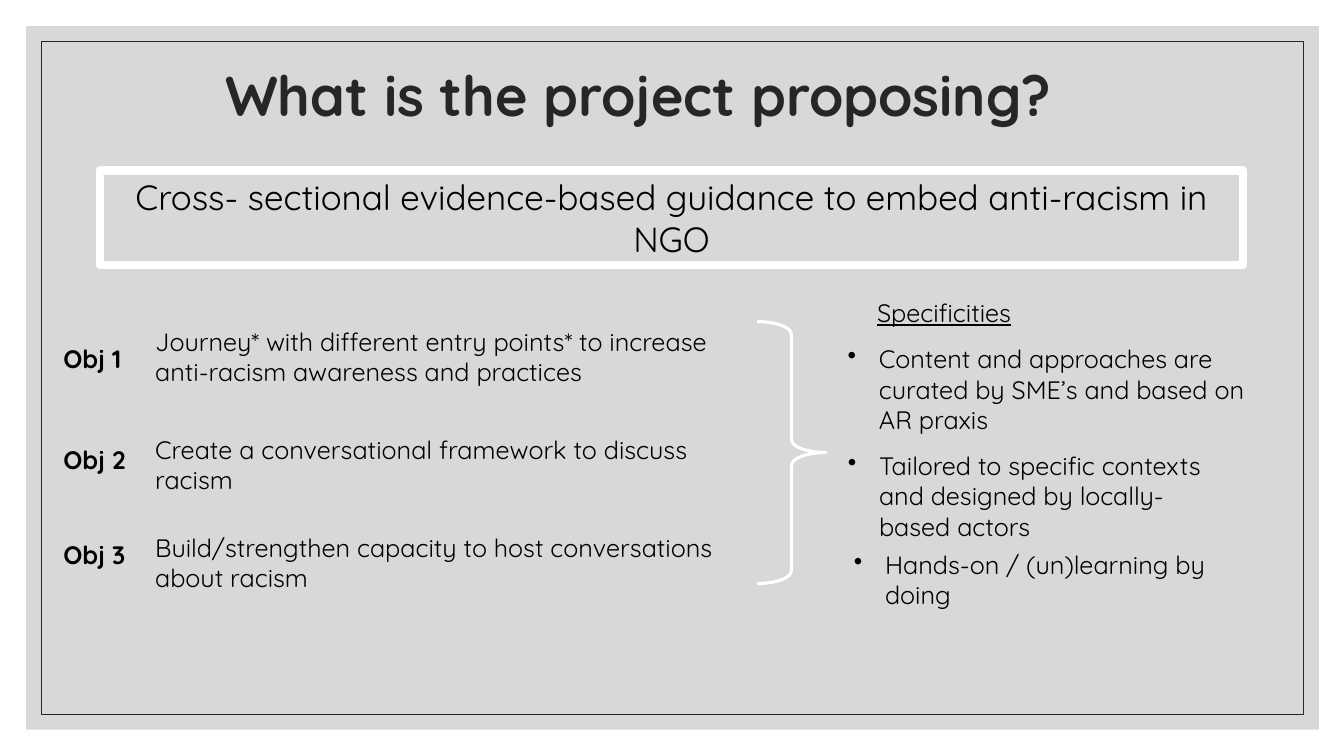
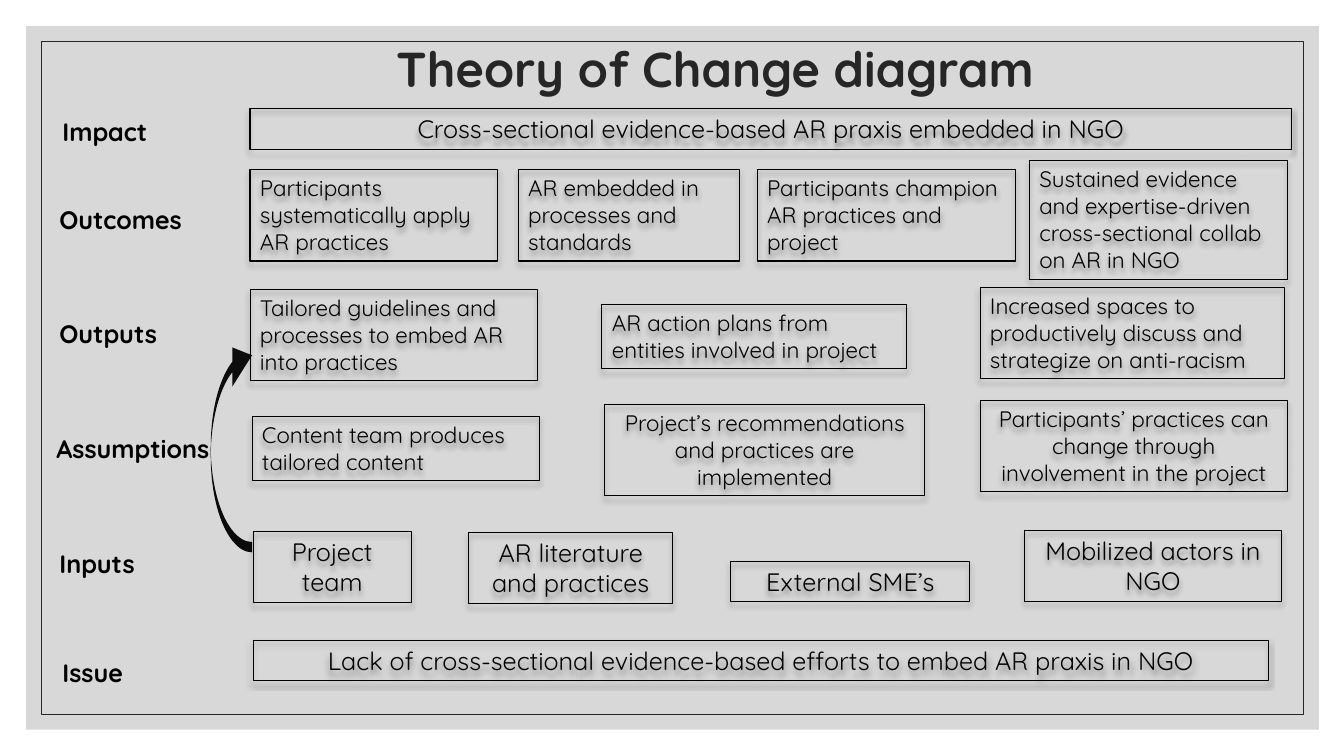
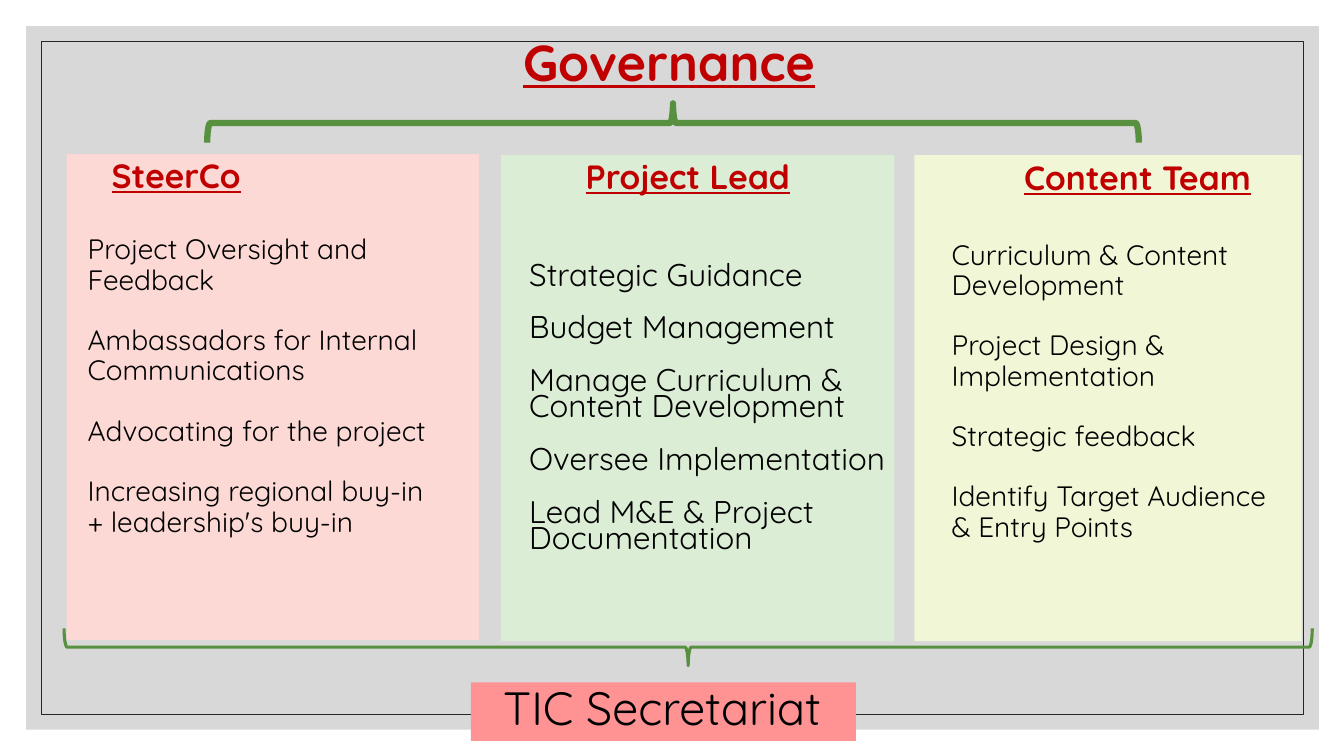
from lxml import etree
from pptx import Presentation
from pptx import util as u
from pptx.dml.color import RGBColor
from pptx.enum import shapes, text
from pptx.oxml.ns import qn

FONT = "Quicksand"
BLACK = RGBColor(0x00, 0x00, 0x00)
WHITE = RGBColor(0xFF, 0xFF, 0xFF)
GREY = RGBColor(0xBF, 0xBF, 0xBF)
CHARCOAL = RGBColor(0x26, 0x26, 0x26)
INK = RGBColor(0x0D, 0x0D, 0x0D)
RED = RGBColor(0xC0, 0x00, 0x00)
GREEN = RGBColor(0x57, 0x90, 0x3F)
PINK = RGBColor(0xFC, 0xD9, 0xD5)
MINT = RGBColor(0xDC, 0xED, 0xD5)
LEMON = RGBColor(0xF1, 0xF6, 0xD6)
CORAL = RGBColor(0xFF, 0x93, 0x93)

KIND = shapes.MSO_SHAPE
LEFT, CENTER = text.PP_ALIGN.LEFT, text.PP_ALIGN.CENTER
TOP, MIDDLE = text.MSO_ANCHOR.TOP, text.MSO_ANCHOR.MIDDLE


def inches(box):
    """Turn a box of numbers into lengths."""
    return [u.Inches(value) for value in box]


def write(frame, items, size, color=BLACK, bold=False, underline=False,
          align=LEFT, anchor=TOP, spacing=None, gap=0, bullet=False):
    """Fill a text frame with one paragraph for each item."""
    frame.word_wrap = True
    frame.vertical_anchor = anchor
    for index, item in enumerate(items):
        para = frame.paragraphs[0] if index == 0 else frame.add_paragraph()
        para.alignment = align
        if spacing:
            para.line_spacing = spacing
        if index and gap:
            para.space_before = u.Pt(gap)
        if bullet:
            props = para._p.get_or_add_pPr()
            props.set("marL", str(u.Inches(0.31)))
            props.set("indent", str(-u.Inches(0.31)))
            etree.SubElement(props, qn("a:buChar")).set("char", "•")
        for number, line in enumerate(item.split("\n")):
            if number:
                para.add_line_break()
            span = para.add_run()
            span.text = line
            span.font.name = FONT
            span.font.size = u.Pt(size)
            span.font.bold = bold
            span.font.underline = underline
            span.font.color.rgb = color


def label(page, box, items, size=18, **style):
    """Add a text box."""
    write(page.shapes.add_textbox(*inches(box)).text_frame, items, size, **style)


def title(page, box, words, size):
    """Add a centred slide title."""
    label(page, box, [words], size, color=CHARCOAL, bold=True,
          align=CENTER, anchor=MIDDLE, spacing=0.9)


def figure(page, box, kind=KIND.RECTANGLE, fill=None, line=None, width=0.75, rotation=0):
    """Add a flat preset shape."""
    shape = page.shapes.add_shape(kind, *inches(box))
    shape.shadow.inherit = False
    shape.rotation = rotation
    if fill is None:
        shape.fill.background()
    else:
        shape.fill.solid()
        shape.fill.fore_color.rgb = fill
    if line is None:
        shape.line.fill.background()
    else:
        shape.line.color.rgb = line
        shape.line.width = u.Pt(width)
    return shape


def add_shadow(shape):
    """Give a shape a soft shadow that falls straight down."""
    effects = shape._element.spPr.find(qn("a:effectLst"))
    shadow = etree.SubElement(effects, qn("a:outerShdw"), blurRad=str(u.Pt(4)),
                              dist=str(u.Pt(3)), dir="5400000", rotWithShape="0")
    color = etree.SubElement(shadow, qn("a:srgbClr"), val=str(BLACK))
    etree.SubElement(color, qn("a:alpha"), val="40000")


def new_page(deck):
    """Add a blank slide with the grey panel and its thin frame."""
    page = deck.slides.add_slide(deck.slide_layouts[6])
    panel = figure(page, (0.26, 0.26, 12.82, 6.98), fill=GREY)
    color = panel._element.spPr.find(qn("a:solidFill"))[0]
    etree.SubElement(color, qn("a:alpha"), val="60000")
    figure(page, (0.41, 0.41, 12.52, 6.68), line=CHARCOAL, width=0.5)
    return page


def objective(page, box, drop, name, words):
    """Place a bold objective name beside its description."""
    left, top, width, height = box
    label(page, (left, top + drop, 0.91, 0.4), [name], bold=True)
    label(page, (left + 0.91, top, width - 0.91, height), [words])


def proposal_slide(deck):
    """Build the slide on what the project proposes."""
    page = new_page(deck)
    title(page, (0.83, 0.39, 11, 1.18), "What is the project proposing?", 40)
    banner = figure(page, (0.99, 1.69, 11.34, 0.94), line=WHITE, width=6)
    write(banner.text_frame,
          ["Cross- sectional evidence-based guidance to embed anti-racism in NGO"],
          25, align=CENTER)
    objectives = [
        (3.19, 6.99, 0.17, "Journey* with different entry points* to increase "
                           "anti-racism awareness and practices"),
        (4.26, 6.7, 0.1, "Create a conversational framework to discuss racism"),
        (5.23, 6.99, 0.07, "Build/strengthen capacity to host conversations about racism"),
    ]
    for number, (top, width, drop, words) in enumerate(objectives, 1):
        objective(page, (0.53, top, width, 0.71), drop, f"Obj {number}", words)
    brace = figure(page, (7.51, 3.19, 0.68, 2.6), KIND.RIGHT_BRACE, line=WHITE, width=2.25)
    brace.adjustments[0] = 0.19
    label(page, (8.6, 2.9, 1.62, 0.4), ["Specificities"], underline=True)
    specificities = [
        ((8.31, 3.36, 4.37, 1.01),
         "Content and approaches are curated by SME’s and based on AR praxis"),
        ((8.31, 4.42, 4.01, 1.01),
         "Tailored to specific contexts and designed by locally-based actors"),
        ((8.37, 5.4, 4.37, 0.71), "Hands-on / (un)learning by doing"),
    ]
    for box, words in specificities:
        label(page, box, [words], bullet=True)


def change_row(page, corner, name, size, boxes):
    """Place a row name and the outlined boxes of that row."""
    label(page, (*corner, 1.92, 0.4), [name], bold=True)
    for *box, align, words in boxes:
        shape = figure(page, box, line=BLACK)
        add_shadow(shape)
        write(shape.text_frame, [words], size, align=align)


def change_slide(deck):
    """Build the theory of change diagram."""
    page = new_page(deck)
    title(page, (3.16, 0.33, 7.87, 0.76), "Theory of Change diagram", 35)
    rows = [
        ((0.52, 1.1), "Impact", 18, [
            (2.48, 1.08, 10.33, 0.4, CENTER,
             "Cross-sectional evidence-based AR praxis embedded in NGO")]),
        ((0.49, 1.98), "Outcomes", 16, [
            (2.48, 1.68, 2.46, 0.91, LEFT, "Participants systematically apply AR practices"),
            (5.14, 1.68, 2.19, 0.91, LEFT, "AR embedded in processes and standards"),
            (7.51, 1.68, 2.56, 0.91, LEFT, "Participants champion AR practices and project"),
            (10.21, 1.59, 2.56, 1.18, LEFT, "Sustained evidence and expertise-driven "
                                            "cross-sectional collab on AR in NGO")]),
        ((0.49, 3.11), "Outputs", 16, [
            (2.48, 2.87, 2.85, 0.91, LEFT,
             "Tailored guidelines and processes to embed AR into practices"),
            (5.97, 3.02, 3.02, 0.64, LEFT, "AR action plans from entities involved in project"),
            (9.72, 2.85, 3.02, 0.91, LEFT, "Increased spaces to productively discuss "
                                           "and strategize on anti-racism")]),
        ((0.46, 4.25), "Assumptions", 16, [
            (2.5, 4.13, 2.85, 0.64, LEFT, "Content team produces tailored content"),
            (6, 4.01, 3.17, 0.91, CENTER,
             "Project’s recommendations and practices are implemented"),
            (9.72, 3.97, 3.05, 0.91, CENTER, "Participants’ practices can change through "
                                             "involvement in the project")]),
        ((0.49, 5.39), "Inputs", 18, [
            (2.51, 5.27, 1.57, 0.71, CENTER, "Project team"),
            (4.65, 5.28, 2.02, 0.71, CENTER, "AR literature and practices"),
            (7.25, 5.57, 2.37, 0.4, CENTER, "External SME’s"),
            (10.16, 5.26, 2.55, 0.71, CENTER, "Mobilized actors in NGO")]),
        ((0.52, 6.47), "Issue", 18, [
            (2.51, 6.35, 10.07, 0.4, CENTER,
             "Lack of cross-sectional evidence-based efforts to embed AR praxis in NGO")]),
    ]
    for row in rows:
        change_row(page, *row)
    arrow = figure(page, (1.22, 4.2, 2.15, 0.41), KIND.CURVED_UP_ARROW,
                   fill=INK, rotation=270)
    arrow._element.spPr.xfrm.set("flipV", "1")
    for index, value in enumerate((0.25, 0.95, 0.48)):
        arrow.adjustments[index] = value


def team_card(page, box, fill, heading, heading_at, duties, duties_at, duties_width,
              size=20, spacing=0.9):
    """Place a coloured card with a heading and a list of duties."""
    left, top, _, height = box
    figure(page, box, fill=fill)
    across, down = heading_at
    label(page, (left + across, top + down, 2.6, 0.78), [heading], 24, color=RED,
          bold=True, underline=True, anchor=MIDDLE, spacing=0.9)
    across, down = duties_at
    label(page, (left + across, top + down, duties_width, height - down), duties, size,
          spacing=spacing, gap=round(size * 1.2 * spacing, 1))


def governance_slide(deck):
    """Build the governance slide."""
    page = new_page(deck)
    team_card(page, (0.66, 1.53, 4.09, 4.82), PINK, "SteerCo", (0.35, -0.16), [
        "Project Oversight and Feedback",
        "Ambassadors for Internal Communications",
        "Advocating for the project",
        "Increasing regional buy-in\n+ leadership's buy-in"], (0.11, 0.76), 3.99)
    team_card(page, (4.97, 1.54, 3.9, 4.82), MINT, "Project Lead", (0.74, -0.16), [
        "Strategic Guidance",
        "Budget Management",
        "Manage Curriculum &\nContent Development",
        "Oversee Implementation",
        "Lead M&E & Project\nDocumentation"], (0.18, 1.04), 3.93, 22.4, 0.7)
    team_card(page, (9.07, 1.54, 3.84, 4.82), LEMON, "Content Team", (0.99, -0.15), [
        "Curriculum & Content\nDevelopment",
        "Project Design & Implementation",
        "Strategic feedback",
        "Identify Target Audience & Entry Points"], (0.27, 0.8), 3.44)
    secretariat = figure(page, (4.67, 6.77, 3.82, 0.58), fill=CORAL)
    secretariat.text_frame.margin_left = u.Inches(0.32)
    write(secretariat.text_frame, ["TIC Secretariat"], 33.3, anchor=MIDDLE, spacing=0.8)
    label(page, (5.09, 0.26, 4.28, 0.71), ["Governance"], 36, color=RED,
          bold=True, underline=True)
    figure(page, (6.48, -3.4, 0.39, 9.24), KIND.RIGHT_BRACE, line=GREEN, width=4.5,
           rotation=270)
    figure(page, (6.64, 0.23, 0.37, 12.38), KIND.RIGHT_BRACE, line=GREEN, width=2.25,
           rotation=90)


def main():
    """Build the deck and save it."""
    deck = Presentation()
    deck.slide_width, deck.slide_height = u.Inches(13.33), u.Inches(7.5)
    proposal_slide(deck)
    change_slide(deck)
    governance_slide(deck)
    deck.save("out.pptx")


if __name__ == "__main__":
    main()
